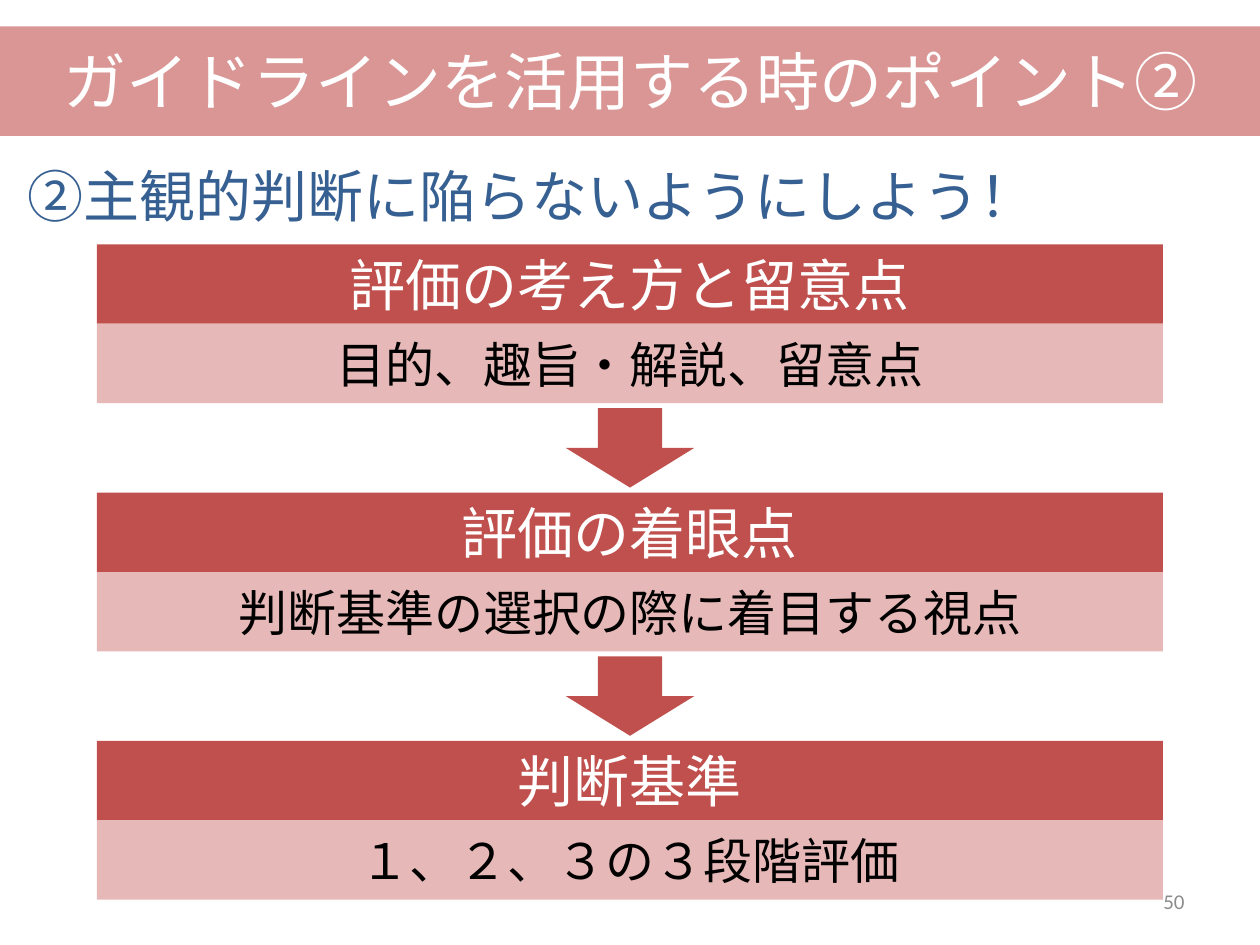
from dataclasses import dataclass

from pptx import Presentation
from pptx.dml.color import RGBColor
from pptx.enum.shapes import MSO_SHAPE as Shape
from pptx.enum.text import MSO_ANCHOR as Anchor, MSO_AUTO_SIZE as Fit, PP_ALIGN as Align
from pptx.oxml.xmlchemy import OxmlElement
from pptx.util import Inches, Pt

ROSE = RGBColor(0xD9, 0x96, 0x94)
RED = RGBColor(0xC0, 0x50, 0x4D)
PINK = RGBColor(0xE6, 0xB9, 0xB8)
BLUE = RGBColor(0x37, 0x60, 0x92)
GRAY = RGBColor(0x8C, 0x8C, 0x8C)
WHITE = RGBColor(0xFF, 0xFF, 0xFF)
BLACK = RGBColor(0x00, 0x00, 0x00)

FONT = "Calibri"
LEFT, WIDTH = 0.77, 8.46
TOP, STEP = 1.94, 1.97
BAR = 0.63
GAP = 0.04
ARROW = 1.02


@dataclass
class Stage:
    head: str
    body: str


STAGES = [
    Stage("評価の考え方と留意点", "目的、趣旨・解説、留意点"),
    Stage("評価の着眼点", "判断基準の選択の際に着目する視点"),
    Stage("判断基準", "１、２、３の３段階評価"),
]


def place(shape, left: float, top: float, width: float, height: float) -> None:
    shape.left, shape.top = Inches(left), Inches(top)
    shape.width, shape.height = Inches(width), Inches(height)


def write(shape, text: str, size: int, color: RGBColor,
          align=Align.CENTER, anchor=Anchor.MIDDLE):
    frame = shape.text_frame
    frame.word_wrap = True
    frame.auto_size = Fit.NONE
    frame.vertical_anchor = anchor
    para = frame.paragraphs[0]
    para.alignment = align
    run = para.add_run()
    run.text = text
    run.font.name = FONT
    run.font.size = Pt(size)
    run.font.color.rgb = color
    return para


def draw(slide, kind, left: float, top: float, width: float, height: float,
         fill: RGBColor):
    shape = slide.shapes.add_shape(
        kind, Inches(left), Inches(top), Inches(width), Inches(height))
    shape.shadow.inherit = False
    shape.fill.solid()
    shape.fill.fore_color.rgb = fill
    shape.line.fill.background()
    return shape


def add_stage(slide, stage: Stage, top: float) -> None:
    head = draw(slide, Shape.RECTANGLE, LEFT, top, WIDTH, BAR, RED)
    write(head, stage.head, 32, WHITE)
    body = draw(slide, Shape.RECTANGLE, LEFT, top + BAR, WIDTH, BAR, PINK)
    write(body, stage.body, 28, BLACK)


def main() -> None:
    deck = Presentation()
    deck.slide_width, deck.slide_height = Inches(10), Inches(7.5)
    slide = deck.slides.add_slide(deck.slide_layouts[1])
    title, lead = slide.placeholders

    # Title band, sent behind the title
    band = draw(slide, Shape.RECTANGLE, 0, 0.21, 10, 0.87, ROSE)
    slide.shapes.element.insert(2, band.element)
    place(title, 0, 0.29, 10, 0.87)
    write(title, "ガイドラインを活用する時のポイント②", 36, WHITE, anchor=Anchor.TOP)

    # Lead line, without bullet or indent
    place(lead, 0.12, 1.15, 9.76, 0.79)
    para = write(lead, "②主観的判断に陥らないようにしよう！", 32, BLUE, Align.LEFT)
    props = para._p.get_or_add_pPr()
    props.set("marL", "0")
    props.set("indent", "0")
    props.append(OxmlElement("a:buNone"))
    para.space_before = Pt(0)

    # Page number
    page = slide.shapes.add_textbox(0, 0, 0, 0)
    place(page, 7.17, 6.95, 2.33, 0.4)
    write(page, "50", 12, GRAY, Align.RIGHT)

    # Stages joined by arrows
    for i, stage in enumerate(STAGES):
        top = TOP + i * STEP
        add_stage(slide, stage, top)
        if i < len(STAGES) - 1:
            draw(slide, Shape.DOWN_ARROW, LEFT + (WIDTH - ARROW) / 2,
                 top + 2 * BAR + GAP, ARROW, BAR, RED)

    deck.save("out.pptx")


if __name__ == "__main__":
    main()
